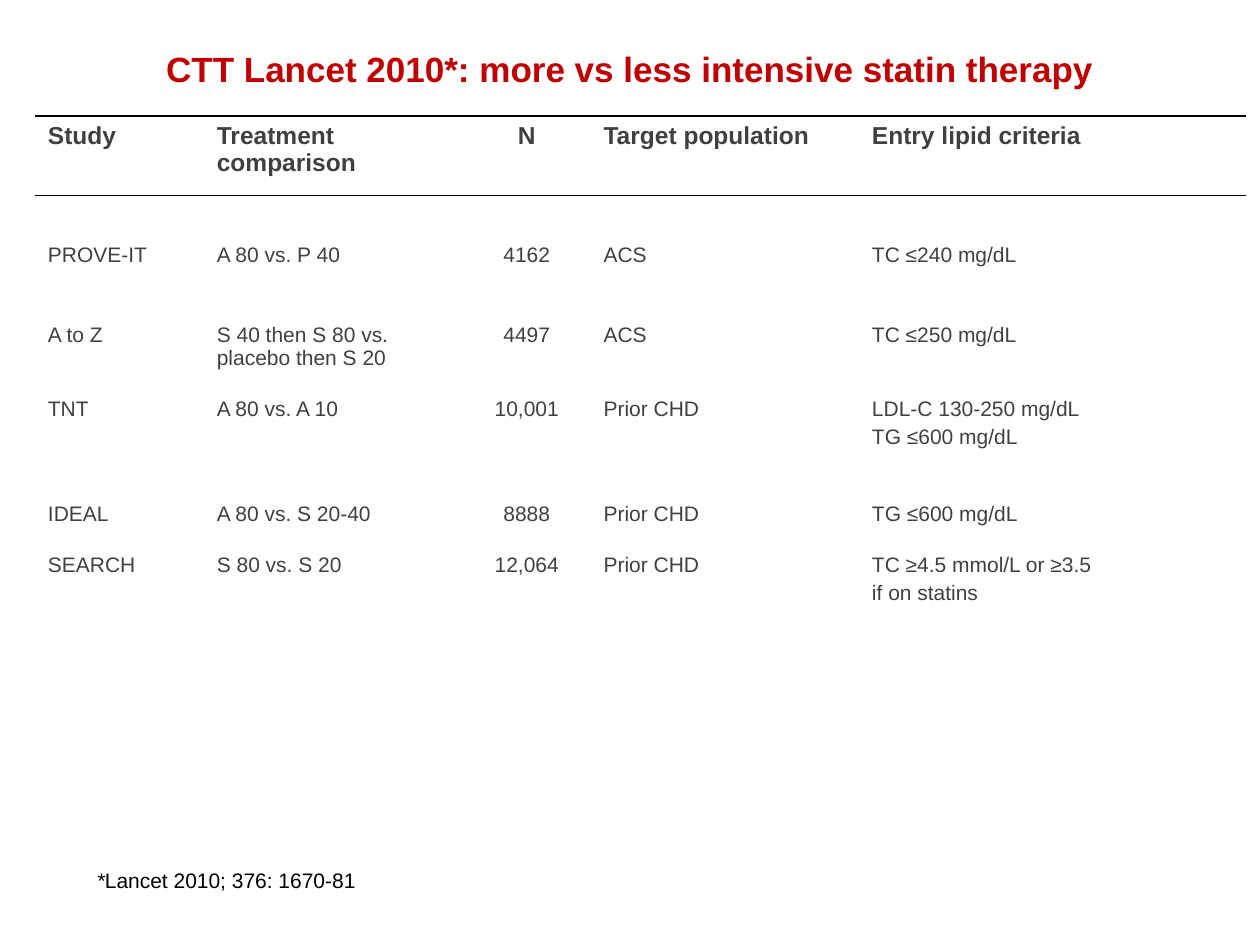
import pptx
import pptx.util
import pptx.dml.color
import pptx.enum.text
import lxml.etree

Pt = pptx.util.Pt
RGB = pptx.dml.color.RGBColor
ALIGN = pptx.enum.text.PP_ALIGN
RED = RGB(0xC0, 0x00, 0x00)
GRAY = RGB(0x40, 0x40, 0x40)
BLACK = RGB(0x00, 0x00, 0x00)
WHITE = RGB(0xFF, 0xFF, 0xFF)


def write(para, text, color, form):
    run = para.add_run()
    run.text = text
    run.font.color.rgb = color
    for key, val in {"name": "Arial", **form}.items():
        setattr(run.font, key, val)


def border(cell, side, color, width):
    props = cell._tc.get_or_add_tcPr()
    line = pptx.oxml.parse_xml(
        '<a:%s xmlns:a="http://schemas.openxmlformats.org/drawingml/2006/main" w="%d">'
        '<a:solidFill><a:srgbClr val="%s"/></a:solidFill></a:%s>'
        % (side, Pt(width), color, side))
    props.append(line)


deck = pptx.Presentation()
deck.slide_width, deck.slide_height = Pt(720), Pt(540)
slide = deck.slides.add_slide(deck.slide_layouts[6])

title = slide.shapes.add_textbox(Pt(36), Pt(21.6), Pt(648), Pt(44.64)).text_frame
title.word_wrap = True
title.margin_top = Pt(5.6)
head = title.paragraphs[0]
head.alignment = ALIGN.CENTER
write(head, "CTT Lancet 2010*: more vs less intensive statin therapy", RED,
      {"size": Pt(20), "bold": True})

rows = [
    ["Study", "Treatment comparison", "N", "Target population", "Entry lipid criteria"],
    [""] * 5,
    ["PROVE-IT", "A 80 vs. P 40", "4162", "ACS", "TC ≤240 mg/dL"],
    ["A to Z", "S 40 then S 80 vs. placebo then S 20", "4497", "ACS", "TC ≤250 mg/dL"],
    ["TNT", "A 80 vs. A 10", "10,001", "Prior CHD", "LDL-C 130-250 mg/dL\nTG ≤600 mg/dL"],
    ["IDEAL", "A 80 vs. S 20-40", "8888", "Prior CHD", "TG ≤600 mg/dL"],
    ["SEARCH", "S 80 vs. S 20", "12,064", "Prior CHD", "TC ≥4.5 mmol/L or ≥3.5\nif on statins"],
]
widths = [96.5, 147.6, 73.4, 153.4, 221]
heights = [45.4, 10.8, 45.4, 42.5, 59.8, 29.5, 64.8]
edges = {
    0: [("lnT", BLACK, 1), ("lnB", BLACK, 1)],
    1: [("lnT", BLACK, 1), ("lnB", WHITE, 1.5)],
    2: [("lnT", WHITE, 1.5)],
}

frame = slide.shapes.add_table(len(rows), len(widths), Pt(20.2), Pt(66.2),
                               Pt(sum(widths)), Pt(sum(heights)))
table = frame.table
for key in ("first_row", "horz_banding"):
    setattr(table, key, False)
table._tbl.tblPr[0].text = "{2D5ABB26-0587-4C30-8999-92F81FD0307C}"
for col, width in zip(table.columns, widths):
    col.width = Pt(width)

for r, row in enumerate(rows):
    table.rows[r].height = Pt(heights[r])
    form = {"size": Pt(12 if r else 14), "bold": r == 0}
    for c, text in enumerate(row):
        cell = table.cell(r, c)
        for side, color, width in edges.get(r, []):
            border(cell, side, color, width)
        cell.fill.background()
        for i, part in enumerate(text.split("\n")):
            body = cell.text_frame
            para = body.add_paragraph() if i else body.paragraphs[0]
            if i:
                para.space_before = Pt(2.4)
            if c == 2:
                para.alignment = ALIGN.CENTER
            if part:
                write(para, part, GRAY, form)
            else:
                end = lxml.etree.SubElement(para._p, pptx.oxml.ns.qn("a:endParaRPr"))
                end.set("sz", "1400")

note = slide.shapes.add_textbox(Pt(48.2), Pt(492.5), Pt(380.2), Pt(21.6)).text_frame
note.word_wrap = True
for text, slant in (("*", True), ("Lancet 2010; 376: 1670-81", False)):
    write(note.paragraphs[0], text, BLACK, {"size": Pt(12), "italic": slant})

deck.save("out.pptx")
